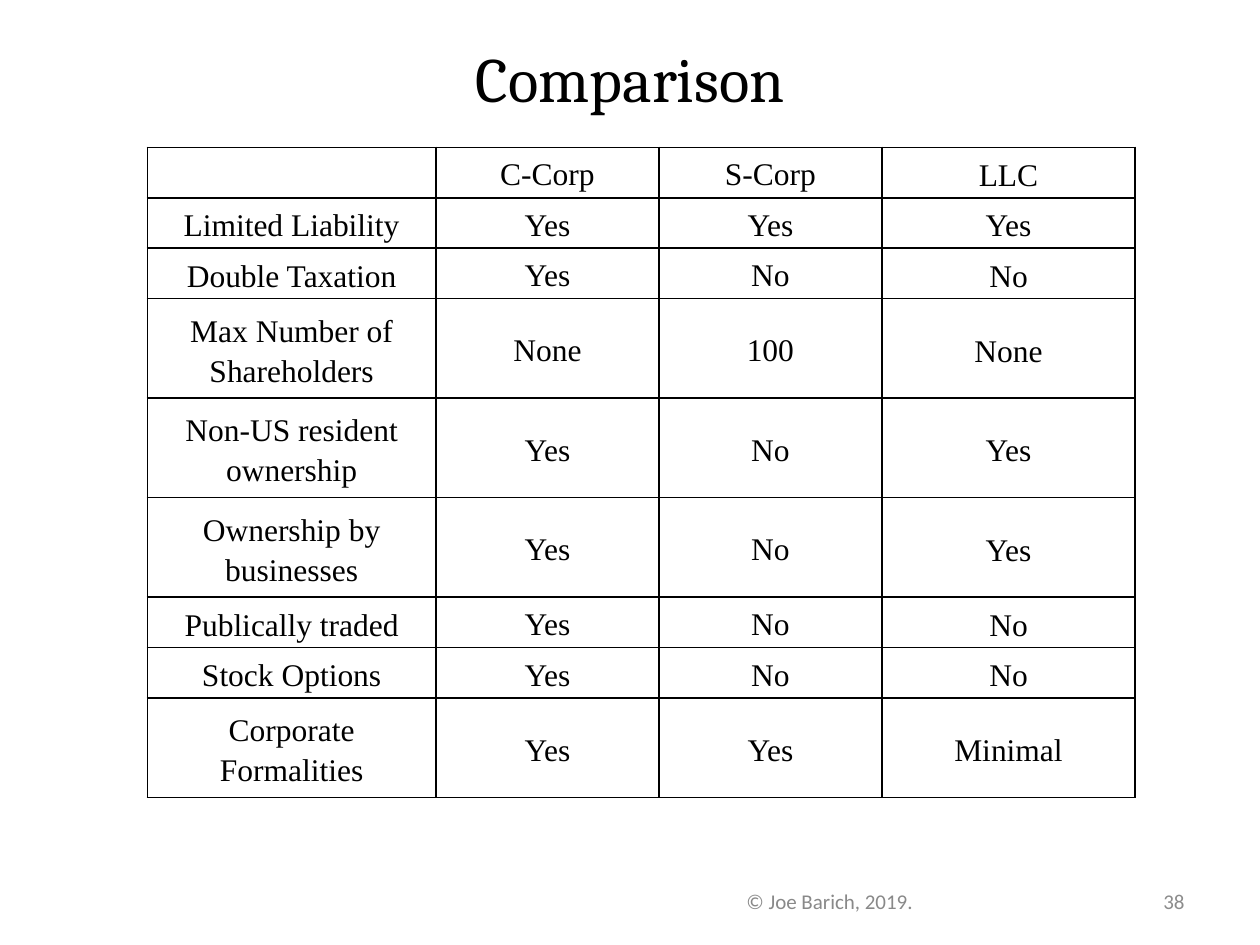
import dataclasses

import lxml.etree
import pptx
import pptx.dml.color
import pptx.enum.text
import pptx.oxml.ns
import pptx.util

Inches = pptx.util.Inches
Pt = pptx.util.Pt
Align = pptx.enum.text.PP_ALIGN
Anchor = pptx.enum.text.MSO_ANCHOR


@dataclasses.dataclass(frozen=True)
class Theme:
    """Colours, fonts and type sizes of the slide."""
    ink: str = "000000"
    note: str = "898989"
    page: str = "8C8C8C"
    head: str = "Cambria"
    body: str = "Times New Roman"
    foot: str = "Calibri"
    title: int = 36
    cell: int = 18
    small: int = 12
    rule: int = 1


class Deck:
    """Holds the theme and the current slide, and adds elements to it."""

    def __init__(self, theme, slide):
        """Keep the theme and the slide."""
        self.theme = theme
        self.slide = slide

    def style(self, para, face, size, color, align):
        """Set the font and alignment of a paragraph."""
        para.alignment = align
        para.font.name = face
        para.font.size = Pt(size)
        para.font.color.rgb = pptx.dml.color.RGBColor.from_string(color)

    def text(self, words, spot, face, size, color, align=Align.CENTER):
        """Add a one-line text box centred on its height."""
        frame = self.slide.shapes.add_textbox(*map(Inches, spot)).text_frame
        frame.word_wrap = True
        frame.vertical_anchor = Anchor.MIDDLE
        para = frame.paragraphs[0]
        para.text = words
        self.style(para, face, size, color, align)

    def border(self, cell):
        """Draw a solid rule on all four sides of a cell."""
        props = cell._tc.get_or_add_tcPr()
        name = pptx.oxml.ns.qn
        for side in ("a:lnL", "a:lnR", "a:lnT", "a:lnB"):
            line = lxml.etree.SubElement(props, name(side), w=str(Pt(self.theme.rule)))
            fill = lxml.etree.SubElement(line, name("a:solidFill"))
            lxml.etree.SubElement(fill, name("a:srgbClr"), val=self.theme.ink)

    def cell(self, cell, words, inset):
        """Fill one table cell with centred text."""
        side, top = inset
        cell.margin_left = cell.margin_right = Inches(side)
        cell.margin_top = Inches(top)
        cell.margin_bottom = 0
        cell.vertical_anchor = Anchor.MIDDLE
        self.border(cell)
        cell.fill.background()
        para = cell.text_frame.paragraphs[0]
        para.text = words
        para.line_spacing = 1.15
        self.style(para, self.theme.body, self.theme.cell, self.theme.ink, Align.CENTER)

    def table(self, rows, spot, widths, heights):
        """Add a ruled table with inset outer columns."""
        size = sum(widths), sum(heights)
        frame = self.slide.shapes.add_table(
            len(rows), len(widths), *map(Inches, spot + size))
        table = frame.table
        table.first_row = table.horz_banding = False
        for col, width in zip(table.columns, widths):
            col.width = Inches(width)
        for row, height, words in zip(table.rows, heights, rows):
            row.height = Inches(height)
            for col, (cell, word) in enumerate(zip(row.cells, words)):
                outer = col in (0, len(widths) - 1)
                self.cell(cell, word, (0.07, 0.01) if outer else (0, 0))


ROWS = [
    ("", "C-Corp", "S-Corp", "LLC"),
    ("Limited Liability", "Yes", "Yes", "Yes"),
    ("Double Taxation", "Yes", "No", "No"),
    ("Max Number of Shareholders", "None", "100", "None"),
    ("Non-US resident ownership", "Yes", "No", "Yes"),
    ("Ownership by businesses", "Yes", "No", "Yes"),
    ("Publically traded", "Yes", "No", "No"),
    ("Stock Options", "Yes", "No", "No"),
    ("Corporate Formalities", "Yes", "Yes", "Minimal"),
]


def main():
    """Build the comparison slide and save it."""
    show = pptx.Presentation()
    show.slide_width, show.slide_height = Inches(10), Inches(7.5)
    theme = Theme()
    deck = Deck(theme, show.slides.add_slide(show.slide_layouts[6]))
    deck.text("© Joe Barich, 2019.", (5, 6.95, 3.17, 0.4),
              theme.foot, theme.small, theme.note)
    deck.text("Comparison", (0.5, 0.3, 9, 0.62), theme.head, theme.title, theme.ink)
    one, two = 0.4, 0.79
    heights = [one] * 3 + [two] * 3 + [one] * 2 + [two]
    deck.table(ROWS, (1.17, 1.17), (2.29, 1.77, 1.77, 2.01), heights)
    deck.text("38", (8.33, 6.95, 1.17, 0.4),
              theme.foot, theme.small, theme.page, Align.RIGHT)
    show.save("out.pptx")


if __name__ == "__main__":
    main()
